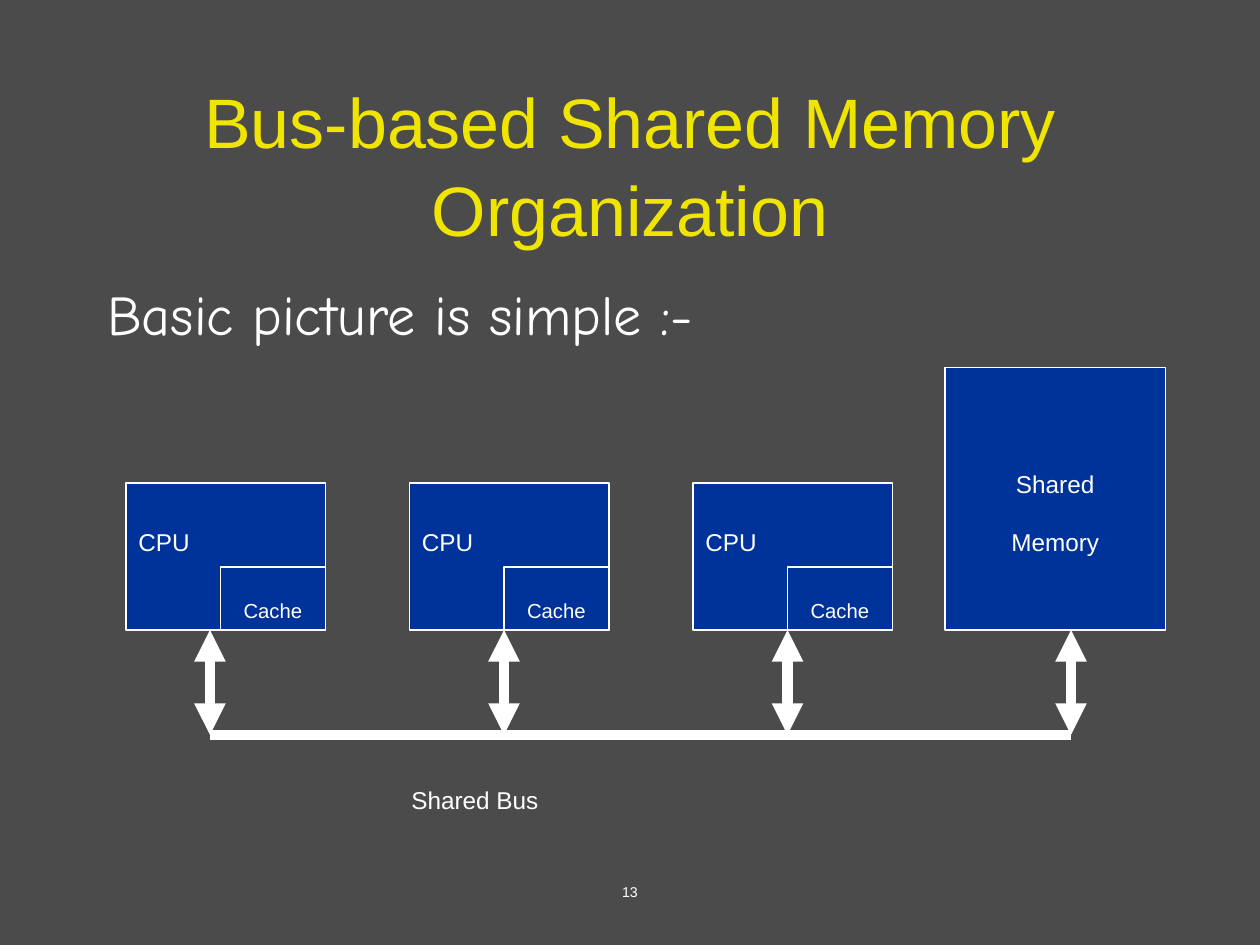
from lxml import etree
from pptx import Presentation
from pptx.dml.color import RGBColor
from pptx.enum.shapes import MSO_CONNECTOR, MSO_SHAPE
from pptx.enum.text import MSO_ANCHOR, MSO_AUTO_SIZE, PP_ALIGN
from pptx.oxml.ns import qn
from pptx.util import Inches, Pt

GRAY = RGBColor(0x4B, 0x4B, 0x4B)
YELLOW = RGBColor(0xF0, 0xE5, 0x00)
WHITE = RGBColor(0xFF, 0xFF, 0xFF)
BLUE = RGBColor(0x00, 0x33, 0x99)

LEFT, CENTER = PP_ALIGN.LEFT, PP_ALIGN.CENTER
TOP, MIDDLE = MSO_ANCHOR.TOP, MSO_ANCHOR.MIDDLE
RECT, STRAIGHT = MSO_SHAPE.RECTANGLE, MSO_CONNECTOR.STRAIGHT

CPU_COLS = (12, 39, 66)
CPU_W, CPU_H = 19, 14
CACHE_W, CACHE_H = 10, 6
BOX_BOTTOM, BUS_ROW = 60, 70
BUS_COLS = (20, 48, 75, 102)


def grid(*cells):
    """Turn columns and rows, twelve to the inch, into lengths."""
    return [Inches(c / 12) for c in cells]


def set_text(shape, text, size, font="Arial", color=WHITE, align=CENTER,
             anchor=MIDDLE, lowered=True, spacing=None):
    """Write one paragraph for each line of text; lowered sets a subscript."""
    tf = shape.text_frame
    tf.word_wrap = True
    tf.auto_size = MSO_AUTO_SIZE.NONE
    tf.vertical_anchor = anchor
    for i, line in enumerate(text.split("\n")):
        p = tf.add_paragraph() if i else tf.paragraphs[0]
        p.alignment = align
        if spacing:
            p.line_spacing = spacing
        r = p.add_run()
        r.text = line
        r.font.name = font
        r.font.size = Pt(size)
        r.font.color.rgb = color
        if lowered:
            r.font._element.set("baseline", "-25000")


def fill_placeholder(ph, cells, text, size, **fmt):
    ph.left, ph.top, ph.width, ph.height = grid(*cells)
    set_text(ph, text, size, lowered=False, **fmt)


def add_label(s, cells, text, size, **fmt):
    set_text(s.shapes.add_textbox(*grid(*cells)), text, size, anchor=TOP, **fmt)


def add_box(s, cells, text, size, **fmt):
    sp = s.shapes.add_shape(RECT, *grid(*cells))
    sp.shadow.inherit = False
    sp.fill.solid()
    sp.fill.fore_color.rgb = BLUE
    sp.line.color.rgb = WHITE
    sp.line.width = Pt(0.75)
    set_text(sp, text, size, **fmt)
    return sp


def add_line(s, cells, arrows=False):
    c = s.shapes.add_connector(STRAIGHT, *grid(*cells))
    c.line.color.rgb = WHITE
    c.line.width = Pt(6)
    if arrows:
        ln = c.line._get_or_add_ln()
        for end in ("a:headEnd", "a:tailEnd"):
            etree.SubElement(ln, qn(end), type="triangle")
    etree.SubElement(c._element.spPr, qn("a:effectLst"))


def add_cpu(s, col):
    cpu = add_box(s, (col, BOX_BOTTOM - CPU_H, CPU_W, CPU_H), "CPU", 24,
                  align=LEFT, anchor=TOP)
    cpu.text_frame.margin_top = Inches(0.13)
    add_box(s, (col + CPU_W - CACHE_W, BOX_BOTTOM - CACHE_H, CACHE_W, CACHE_H),
            "Cache", 20)


def main():
    prs = Presentation()
    prs.slide_width, prs.slide_height = Inches(10), Inches(7.5)
    s = prs.slides.add_slide(prs.slide_layouts[1])
    s.background.fill.solid()
    s.background.fill.fore_color.rgb = GRAY

    fill_placeholder(s.shapes.title, (9, 8, 102, 15),
                     "Bus-based Shared Memory Organization", 40,
                     color=YELLOW, spacing=1.04)
    body = s.placeholders[1]
    fill_placeholder(body, (9, 26, 102, 13), "Basic picture is simple :-", 32,
                     font="Comic Neue", align=LEFT, anchor=TOP)
    pPr = body.text_frame.paragraphs[0]._p.get_or_add_pPr()
    pPr.set("marL", str(Inches(0.38)))
    pPr.set("indent", str(-Inches(0.38)))
    etree.SubElement(pPr, qn("a:buNone"))

    for col in CPU_COLS:
        add_cpu(s, col)
    add_box(s, (90, 35, 21, 25), "Shared\nMemory", 24)

    add_line(s, (BUS_COLS[0], BUS_ROW, BUS_COLS[-1], BUS_ROW))
    for col in BUS_COLS:
        add_line(s, (col, BOX_BOTTOM, col, BUS_ROW), arrows=True)

    add_label(s, (38, 71.5, 20.8, 6), "Shared Bus", 24, align=LEFT)
    add_label(s, (41, 82, 38, 6), "13", 14)
    prs.save("out.pptx")


if __name__ == "__main__":
    main()
